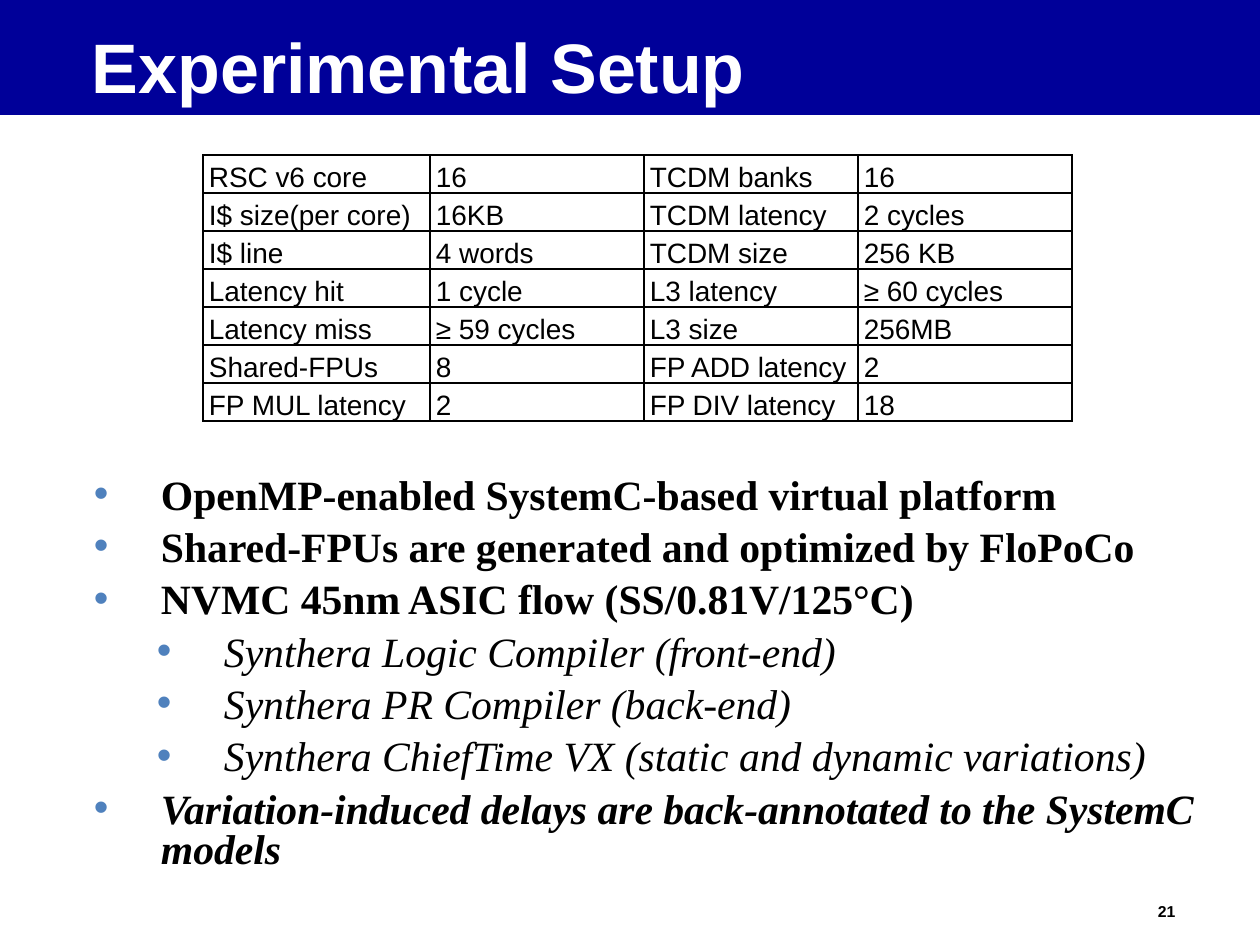
from pptx import Presentation, util as u
from pptx.dml.color import RGBColor
from pptx.enum import shapes, text
from pptx.oxml import parse_xml
from pptx.oxml.ns import nsdecls

PX = u.Inches(1) // 126
HUE = {"navy": "000099", "white": "FFFFFF", "black": "000000", "blue": "4F81BD"}


def write(para, words, size, font="Arial", hue="black", bold=False, slant=False, lead=None):
    run = para.add_run()
    run.text = words
    run.font.size = u.Pt(size)
    run.font.name = font
    run.font.bold = bold
    run.font.italic = slant
    run.font.color.rgb = RGBColor.from_string(HUE[hue])
    if lead:
        para.line_spacing = lead


def frame(x, y, w, h, side, edge):
    box = slide.shapes.add_textbox(x * PX, y * PX, w * PX, h * PX)
    body = box.text_frame
    body.word_wrap = True
    body.margin_left = body.margin_right = side * PX
    body.margin_top = body.margin_bottom = edge * PX
    return box, body


deck = Presentation()
deck.slide_width, deck.slide_height = 1260 * PX, 945 * PX
slide = deck.slides.add_slide(deck.slide_layouts[6])

band = slide.shapes.add_shape(shapes.MSO_SHAPE.RECTANGLE, 0, 0, 1260 * PX, 115 * PX)
band.shadow.inherit = False
band.fill.solid()
band.fill.fore_color.rgb = RGBColor.from_string(HUE["navy"])
band.line.fill.background()

page, body = frame(1150, 900, 47, 24, 8, 3)
write(body.paragraphs[0], "21", 9, bold=True, lead=0.97)

rows = [
    ("RSC v6 core", "16", "TCDM banks", "16"),
    ("I$ size(per core)", "16KB", "TCDM latency", "2 cycles"),
    ("I$ line", "4 words", "TCDM size", "256 KB"),
    ("Latency hit", "1 cycle", "L3 latency", "≥ 60 cycles"),
    ("Latency miss", "≥ 59 cycles", "L3 size", "256MB"),
    ("Shared-FPUs", "8", "FP ADD latency", "2"),
    ("FP MUL latency", "2", "FP DIV latency", "18"),
]
grid = slide.shapes.add_table(7, 4, 203 * PX, 155 * PX, 869 * PX, 266 * PX).table
grid.first_row = grid.horz_banding = False
for col, wide in zip(grid.columns, (227, 214, 214, 214)):
    col.width = wide * PX
for r, row in enumerate(rows):
    grid.rows[r].height = 38 * PX
    for c, words in enumerate(row):
        cell = grid.cell(r, c)
        cell.margin_left = cell.margin_right = 6 * PX
        cell.margin_top = cell.margin_bottom = 0
        cell.vertical_anchor = text.MSO_ANCHOR.BOTTOM
        write(cell.text_frame.paragraphs[0], words, 16)
        props = cell._tc.get_or_add_tcPr()
        for side in "LRTB":
            thick = u.Pt(1.5 if (c, side) in ((1, "R"), (2, "L")) else 1)
            props.append(parse_xml(
                f'<a:ln{side} {nsdecls("a")} w="{thick}"><a:solidFill>'
                f'<a:srgbClr val="{HUE["black"]}"/></a:solidFill></a:ln{side}>'))
        cell.fill.background()

title, body = frame(84, 32, 1103, 79, 8, 3)
title.fill.solid()
title.fill.fore_color.rgb = RGBColor.from_string(HUE["navy"])
write(body.paragraphs[0], "Experimental Setup", 40, hue="white", bold=True, lead=0.87)

points = [
    (0, "OpenMP-enabled SystemC-based virtual platform", True, False),
    (0, "Shared-FPUs are generated and optimized by FloPoCo", True, False),
    (0, "NVMC 45nm ASIC flow (SS/0.81V/125°C)", True, False),
    (1, "Synthera Logic Compiler (front-end)", False, True),
    (1, "Synthera PR Compiler (back-end)", False, True),
    (1, "Synthera ChiefTime VX (static and dynamic variations)", False, True),
    (0, "Variation-induced delays are back-annotated to the SystemC models", True, True),
]
notes, body = frame(84, 473, 1124, 446, 10, 5)
for n, (level, words, bold, slant) in enumerate(points):
    para = body.add_paragraph() if n else body.paragraphs[0]
    para.level = level
    para.space_before = u.Pt(7.1)
    write(para, words, 23.8, font="Times New Roman", bold=bold, slant=slant, lead=0.8)
    props = para._p.get_or_add_pPr()
    props.set("marL", str((67 + 63 * level) * PX))
    props.set("indent", str(-67 * PX))
    for tag in (f'<a:buClr {nsdecls("a")}><a:srgbClr val="{HUE["blue"]}"/></a:buClr>',
                f'<a:buFont {nsdecls("a")} typeface="Arial"/>',
                f'<a:buChar {nsdecls("a")} char="•"/>'):
        props.append(parse_xml(tag))

deck.save("out.pptx")
